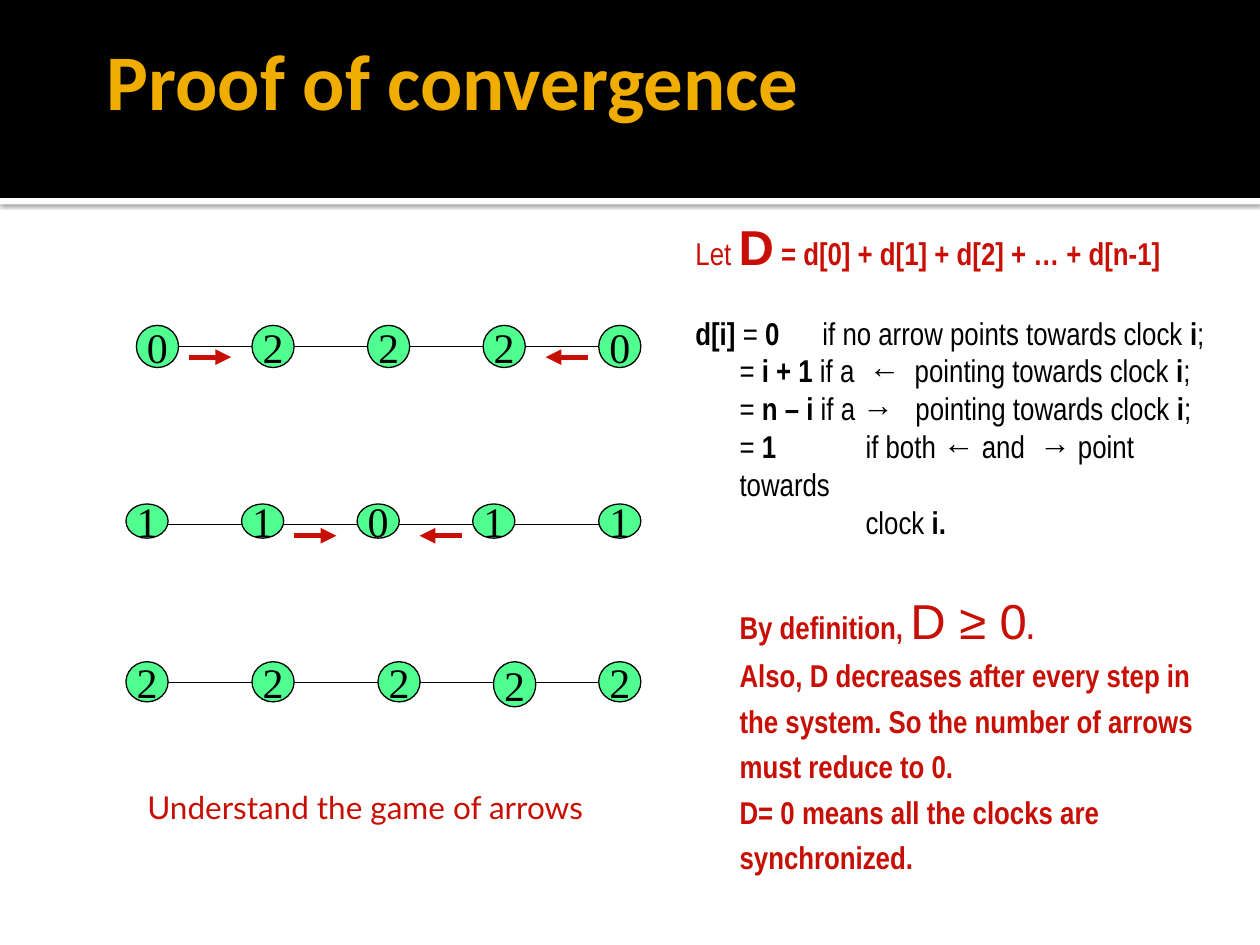
import pptx
import pptx.dml.color
import pptx.enum.shapes
import pptx.enum.text
import pptx.oxml
import pptx.oxml.ns
import pptx.util

Cm, Pt = pptx.util.Cm, pptx.util.Pt
SHAPE = pptx.enum.shapes.MSO_SHAPE
ALIGN = pptx.enum.text.PP_ALIGN
ANCHOR = pptx.enum.text.MSO_ANCHOR

RED, BLACK, WHITE, GOLD, GREEN = "C70F05", "000000", "FFFFFF", "F0AD00", "51FF91"
NODE_WIDTH = 0.85
ARROW_LENGTH = 0.85

# Each chain: top, link height, nodes as (left, height, clock value)
CHAINS = [
    (6.56, 6.99, [(2.75, 0.85, "0"), (5.08, 0.85, "2"), (7.41, 0.85, "2"),
                  (9.74, 0.85, "2"), (12.07, 0.85, "0")]),
    (10.16, 10.58, [(2.54, 0.69, "1"), (4.87, 0.69, "1"), (7.2, 0.69, "0"),
                    (9.53, 0.69, "1"), (12.07, 0.69, "1")]),
    (13.34, 13.76, [(2.54, 0.81, "2"), (5.08, 0.81, "2"), (7.62, 0.81, "2"),
                    (9.95, 0.91, "2"), (12.07, 0.81, "2")]),
]

# Red arrows: start, direction, height
ARROWS = [(3.81, 1, 7.2), (5.93, 1, 10.8), (11.85, -1, 7.2), (9.31, -1, 10.8)]


def rgb(color):
    return pptx.dml.color.RGBColor.from_string(color)


def add_xml(parent, tag, inner="", **attributes):
    listed = " ".join(f'{key}="{value}"' for key, value in attributes.items())
    namespace = pptx.oxml.ns.nsdecls("a")
    parent.append(pptx.oxml.parse_xml(f"<a:{tag} {namespace} {listed}>{inner}</a:{tag}>"))


def add_run(paragraph, text, size, font, color, bold=False):
    run = paragraph.add_run()
    run.text = text
    run.font.size, run.font.name, run.font.bold = Pt(size), font, bold
    run.font.color.rgb = rgb(color)
    return run


def add_text_box(slide, left, top, width, height, insets, wrap=True):
    frame = slide.shapes.add_textbox(Cm(left), Cm(top), Cm(width), Cm(height)).text_frame
    frame.word_wrap = wrap
    (frame.margin_left, frame.margin_top,
     frame.margin_right, frame.margin_bottom) = map(Cm, insets)
    return frame


def add_band(slide, top, height, color):
    band = slide.shapes.add_shape(SHAPE.RECTANGLE, 0, Cm(top), Cm(25.4), Cm(height))
    band.shadow.inherit = False
    band.fill.solid()
    band.fill.fore_color.rgb = rgb(color)
    band.line.fill.background()
    return band


def add_node(slide, left, top, height, value):
    node = slide.shapes.add_shape(SHAPE.OVAL, Cm(left), Cm(top), Cm(NODE_WIDTH), Cm(height))
    node.shadow.inherit = False
    node.fill.solid()
    node.fill.fore_color.rgb = rgb(GREEN)
    node.line.color.rgb = rgb(BLACK)
    node.line.width = Pt(0.75)
    node.text_frame.word_wrap = False
    node.text_frame.vertical_anchor = ANCHOR.MIDDLE
    label = node.text_frame.paragraphs[0]
    label.alignment = ALIGN.CENTER
    add_run(label, value, 24, "Times New Roman", BLACK)


def add_line(slide, start, end, y, color, width, arrow=False):
    line = slide.shapes.add_connector(
        pptx.enum.shapes.MSO_CONNECTOR.STRAIGHT, Cm(start), Cm(y), Cm(end), Cm(y))
    line.line.color.rgb = rgb(color)
    line.line.width = Pt(width)
    if arrow:
        add_xml(line.line._get_or_add_ln(), "tailEnd", type="triangle")
    add_xml(line._element.spPr, "effectLst")


def add_chain(slide, top, link_y, nodes):
    for left, height, value in nodes:
        add_node(slide, left, top, height, value)
    for current, following in zip(nodes, nodes[1:]):
        add_line(slide, current[0] + NODE_WIDTH, following[0], link_y, BLACK, 0.75)


def add_proof_line(frame, runs, color=BLACK, left=1.22, hanging=0,
                   before=0, spacing=1.0, align=ALIGN.LEFT):
    """Each run is (text, bold) or (text, bold, "large")."""
    first = frame.paragraphs[0]
    paragraph = frame.add_paragraph() if first.runs else first
    paragraph.alignment = align
    paragraph.space_before = Pt(before)
    paragraph.line_spacing = spacing
    properties = paragraph._p.get_or_add_pPr()
    properties.set("marL", str(Cm(left)))
    properties.set("indent", str(-Cm(hanging)))
    properties.set("defTabSz", str(Cm(2.54)))
    for text, bold, *large in runs:
        size, font = (28, "Arial") if large else (18, "Arial Narrow")
        add_run(paragraph, text, size, font, color, bold)
    return paragraph


def add_proof(slide):
    frame = add_text_box(slide, 13.54, 4.01, 11.23, 13.54, (0.15, 0.36, 0.25, 0.13))
    add_proof_line(frame, [("Let ", False), ("D", True, "large"),
                           (" = d[0] + d[1] + d[2] + … + d[n-1]", True)],
                   RED, hanging=0.89)

    # Cases of d[i]
    no_arrow = add_proof_line(
        frame, [("d[i] ", True), ("= ", False), ("0", True), (" ", False),
                ("if no arrow points towards clock ", False), ("i", True), (";", False)],
        hanging=0.89, before=21.7, align=ALIGN.JUSTIFY)
    # Widen the gap between the value and its condition
    no_arrow.runs[3].font._element.set("spc", "2050")
    add_proof_line(frame, [("= ", False), ("i + 1", True), (" if a  ", False), ("←  ", True),
                           ("pointing towards clock ", False), ("i", True), ("; ", False)],
                   align=ALIGN.JUSTIFY)
    add_proof_line(frame, [("= ", False), ("n – i ", True), ("if a ", False), ("→  ", True),
                           (" pointing towards clock ", False), ("i", True), (";", False)],
                   align=ALIGN.JUSTIFY)
    add_proof_line(frame, [("= ", False), ("1\t", True), ("if both ", False), ("←", True),
                           (" and  ", False), ("→ ", True), ("point towards", False)])
    add_proof_line(frame, [("clock ", False), ("i.", True)], left=3.76)

    # Conclusion
    add_proof_line(frame, [("By definition, ", True), ("D ≥ 0", False, "large"), (".", True)],
                   RED, before=21.7, spacing=1.2)
    for sentence in ("Also, D decreases after every step in the system. "
                     "So the number of arrows must reduce to 0.",
                     "D= 0 means all the clocks are synchronized."):
        add_proof_line(frame, [(sentence, True)], RED, spacing=1.2)


def main():
    presentation = pptx.Presentation()
    presentation.slide_width, presentation.slide_height = Cm(25.4), Cm(19.05)
    slide = presentation.slides.add_slide(presentation.slide_layouts[6])

    # Header
    rule = add_band(slide, 3.99, 0.13, WHITE)
    add_xml(rule._element.spPr.find(pptx.oxml.ns.qn("a:effectLst")), "outerShdw",
            '<a:srgbClr val="000000"><a:alpha val="60000"/></a:srgbClr>',
            blurRad=Pt(2.5), dist=Pt(0.8), dir=5400000, algn="tl", rotWithShape=0)
    add_band(slide, 0, 3.99, BLACK)
    title = add_text_box(slide, 1.9, 0, 21.59, 3.18, (0.25, 0.13, 0.13, 0.13))
    title.vertical_anchor = ANCHOR.MIDDLE
    add_run(title.paragraphs[0], "Proof of convergence", 45, "Calibri", GOLD, True)

    add_proof(slide)

    # Clock chains with their arrows
    for top, link_y, nodes in CHAINS:
        add_chain(slide, top, link_y, nodes)
    for start, direction, y in ARROWS:
        add_line(slide, start, start + direction * ARROW_LENGTH, y, RED, 3, arrow=True)

    # Caption
    caption = add_text_box(slide, 2.72, 15.75, 9.42, 1.02, (0.25, 0.13, 0.25, 0.13), wrap=False)
    add_run(caption.paragraphs[0], "Understand the game of arrows", 18, "Lato", RED)

    presentation.save("out.pptx")


if __name__ == "__main__":
    main()
